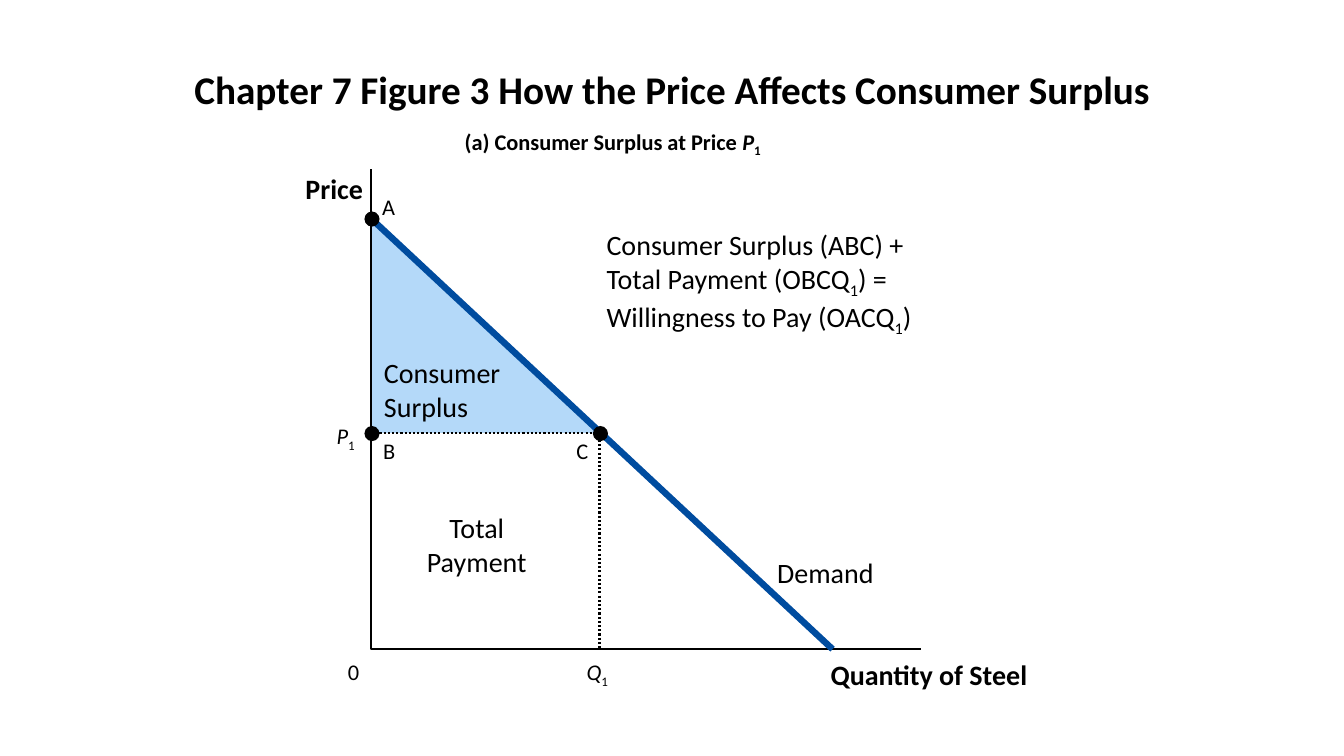
"""Build the slide on how the price affects consumer surplus."""
from lxml import etree
from pptx import Presentation
from pptx.dml.color import RGBColor
from pptx.enum.dml import MSO_LINE
from pptx.enum.shapes import MSO_CONNECTOR, MSO_SHAPE
from pptx.enum.text import MSO_ANCHOR, MSO_AUTO_SIZE, PP_ALIGN
from pptx.oxml.ns import qn
from pptx.util import Pt

STRAIGHT = MSO_CONNECTOR.STRAIGHT
OVAL = MSO_SHAPE.OVAL
DOTTED = MSO_LINE.ROUND_DOT
LEFT, CENTER = PP_ALIGN.LEFT, PP_ALIGN.CENTER
MIDDLE = MSO_ANCHOR.MIDDLE
FIT = MSO_AUTO_SIZE.SHAPE_TO_FIT_TEXT
BLACK, BLUE, LIGHT_BLUE = "000000", "004C9F", "B4D9F9"

prs = Presentation()
prs.slide_width, prs.slide_height = Pt(960), Pt(540)
slide = prs.slides.add_slide(prs.slide_layouts[6])
shapes = slide.shapes


def color(value):
    return RGBColor.from_string(value)


def add_label(box, pieces, size, bold=False, align=LEFT, inset=0):
    """Pieces are plain text, a line break, or text led by / (italic) or _ (subscript)."""
    label = shapes.add_textbox(*map(Pt, box))
    frame = label.text_frame
    frame.word_wrap = inset > 0
    frame.auto_size = FIT
    frame.margin_left = frame.margin_right = Pt(inset)
    frame.margin_top = frame.margin_bottom = Pt(inset / 2)
    paragraph = frame.paragraphs[0]
    paragraph.alignment = align
    font = paragraph.font
    font.name, font.size, font.bold = "Calibri", Pt(size), bold
    font.color.rgb = color(BLACK)
    for piece in pieces:
        if piece == "\n":
            paragraph.add_line_break()
            continue
        run = paragraph.add_run()
        run.text = piece.lstrip("/_")
        if piece.startswith("/"):
            run.font.italic = True
        if piece.startswith("_"):
            run._r.get_or_add_rPr().set("baseline", "-25000")
    return frame


axis_x, axis_y = 265, 463.7
price_y, quantity_x = 309.2, 428.2
choke_y, demand_end_x = 156, 594.7

title = add_label((48, 21.6, 864, 90),
                  ["Chapter 7 Figure 3 How the Price Affects Consumer Surplus"],
                  28, True, CENTER, 7.2)
title.auto_size = MSO_AUTO_SIZE.NONE
title.vertical_anchor = MIDDLE
title.paragraphs[0].line_spacing = 0.8

outlines = [
    ([(axis_x, 154.8), (axis_x, price_y), (quantity_x, price_y)], LIGHT_BLUE, None),
    ([(axis_x, 121), (axis_x, axis_y), (658, axis_y)], None, MSO_LINE.SOLID),
    ([(axis_x, price_y), (quantity_x, price_y), (quantity_x, axis_y)], None, DOTTED),
]
for points, fill, dash in outlines:
    start, *rest = [(Pt(x), Pt(y)) for x, y in points]
    builder = shapes.build_freeform(*start)
    builder.add_line_segments(rest, close=fill is not None)
    outline = builder.convert_to_shape()
    outline.shadow.inherit = False
    if fill:
        outline.fill.solid()
        outline.fill.fore_color.rgb = color(fill)
        outline.line.fill.background()
    else:
        outline.fill.background()
        outline.line.color.rgb = color(BLACK)
        outline.line.width = Pt(1.5)
        outline.line.dash_style = dash

demand = shapes.add_connector(STRAIGHT, Pt(axis_x), Pt(choke_y), Pt(demand_end_x), Pt(axis_y))
demand.line.color.rgb = color(BLUE)
demand.line.width = Pt(4.63)
etree.SubElement(demand._element.spPr, qn("a:effectLst"))

dot_size = 10.8
for x, y in [(axis_x, price_y), (axis_x, choke_y), (quantity_x, price_y)]:
    dot = shapes.add_shape(OVAL, Pt(x + 0.7 - dot_size / 2), Pt(y + 0.5 - dot_size / 2),
                           Pt(dot_size), Pt(dot_size))
    dot.shadow.inherit = False
    dot.fill.solid()
    dot.fill.fore_color.rgb = color(BLACK)
    dot.line.fill.background()

labels = [
    ((331.9, 91.4, 221.8, 19.4), ["(a) Consumer Surplus at Price ", "/P", "_1"], 16, True),
    ((218.2, 122.4, 41.8, 24.5), ["Price"], 20, True),
    ((593.3, 469.4, 141.8, 24.5), ["Quantity of Steel"], 20, True),
    ((274.3, 254.2, 83.5, 48.2), ["Consumer", "\n", "Surplus"], 20),
    ((555.1, 396.7, 69.8, 24.5), ["Demand"], 20),
    ((248.4, 470.2, 7.9, 19.4), ["0"], 16),
    ((240.5, 301.7, 13.7, 19.4), ["/P", "_1"], 16),
    ((419, 470.2, 15.8, 19.4), ["/Q", "_1"], 16),
    ((272.9, 138.2, 9.4, 19.4), ["A"], 16),
    ((273.6, 312.5, 8.6, 19.4), ["B"], 16),
    ((411.8, 312.5, 8.6, 19.4), ["C"], 16),
    ((288, 361.4, 105.1, 55.4), ["Total Payment"], 20, False, CENTER, 7.2),
    ((426.2, 159.1, 275.8, 79.9),
     ["Consumer Surplus (ABC) + ", "\n", "Total Payment (OBCQ", "_1", ") = ", "\n",
      "Willingness to Pay (OACQ", "_1", ")"], 20, False, LEFT, 7.2),
]
for label in labels:
    add_label(*label)

prs.save("out.pptx")
